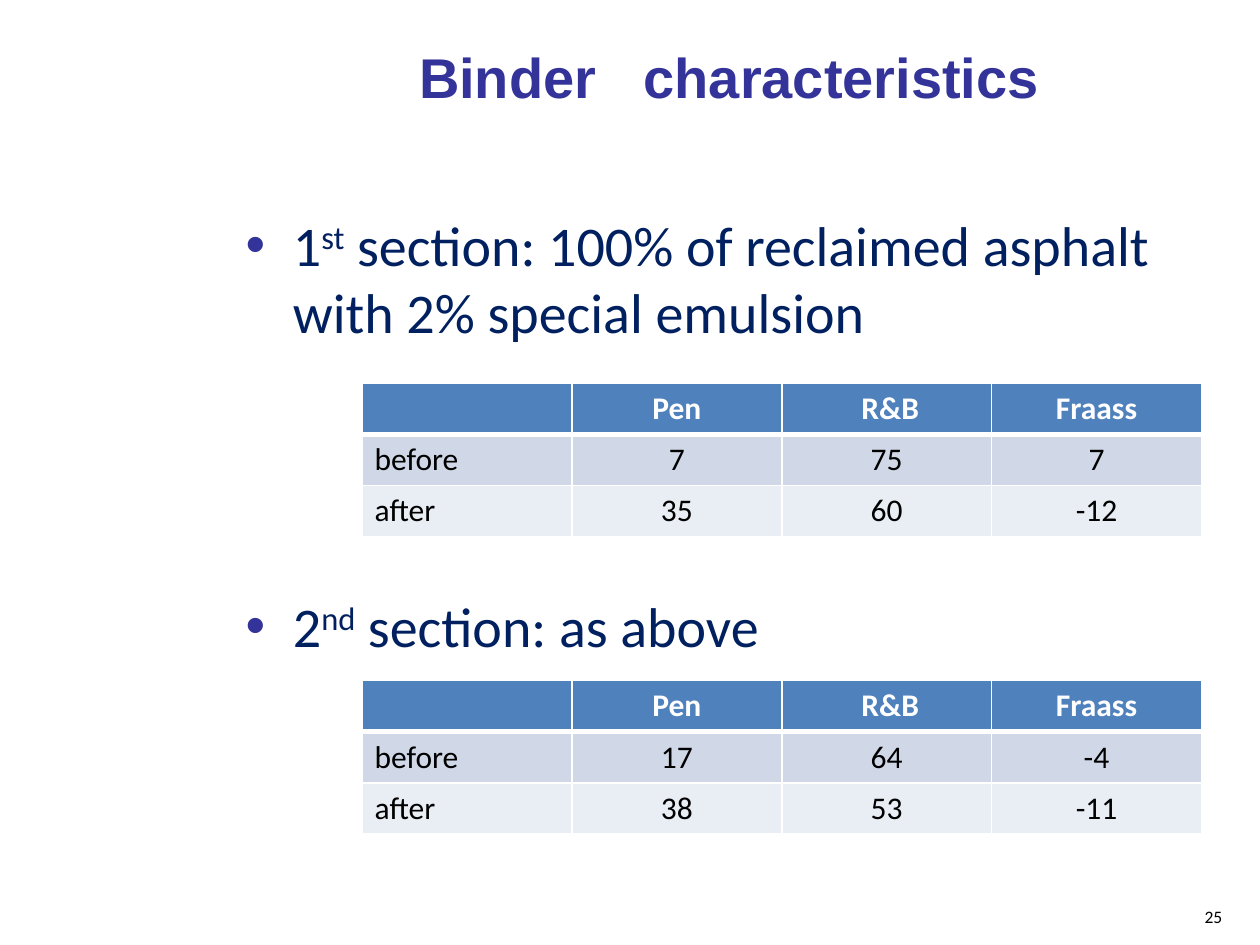
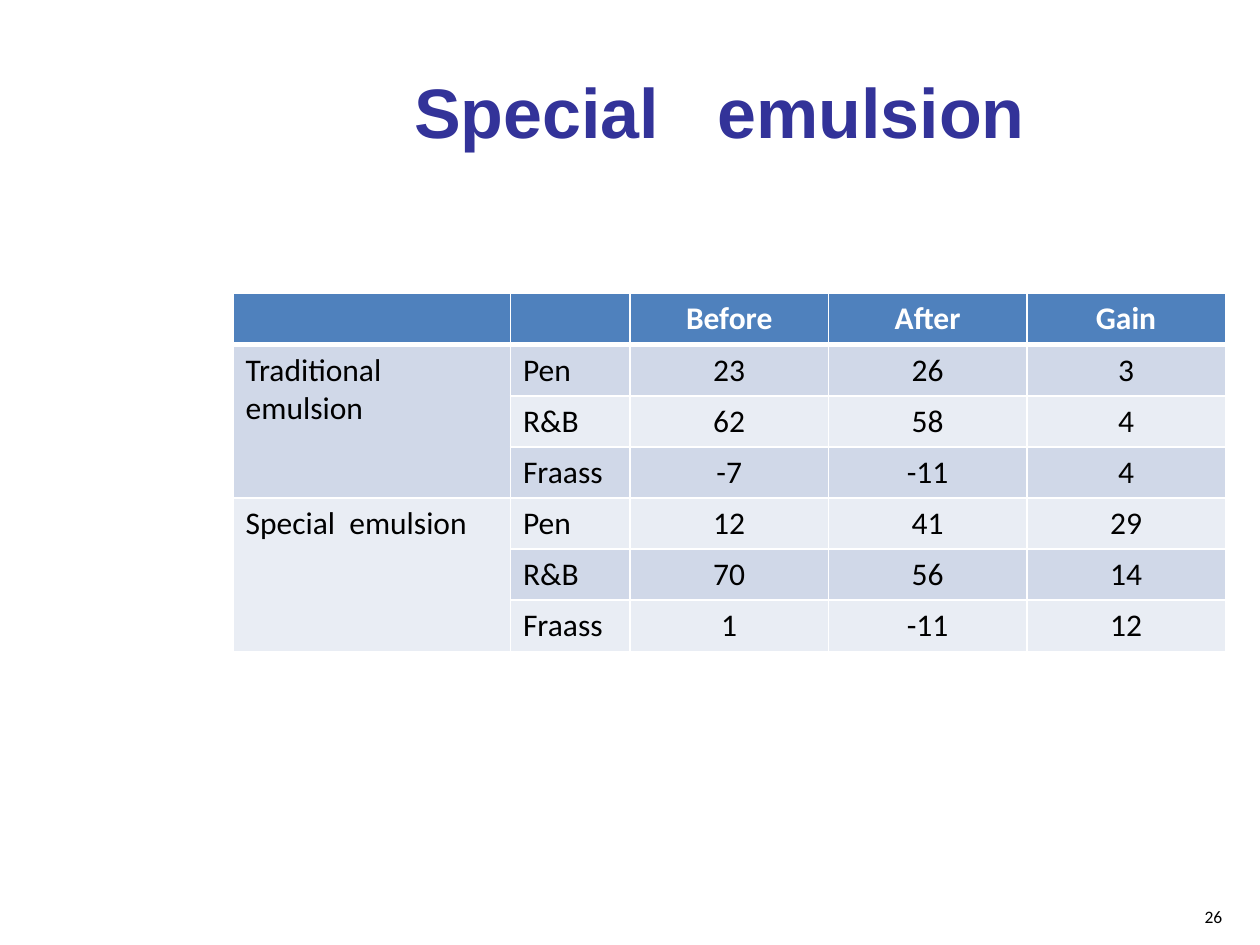
from pptx import Presentation
from pptx.dml.color import RGBColor
from pptx.enum.text import MSO_ANCHOR, MSO_AUTO_SIZE, PP_ALIGN
from pptx.oxml.ns import qn
from pptx.util import Cm, Pt
from lxml.etree import SubElement

COLORS = {
    "title": "333399",
    "body": "002060",
    "header": "4F81BD",
    "band_dark": "D0D8E8",
    "band_light": "E9EDF4",
    "white": "FFFFFF",
    "black": "000000",
}
CONTENT_LEFT, CONTENT_WIDTH = Cm(4.7), Cm(20)
ROW_HEIGHT = Cm(1.03)
TESTS = ["Pen", " R&B", "Fraass"]


# Text
def write_text(paragraph, text, size=18, color="black", font="Calibri",
               bold=False, raised=0, spacing=0):
    """Add a run; raised is a percentage, spacing is in points."""
    run = paragraph.add_run()
    run.text = text
    run.font.size = Pt(size)
    run.font.name = font
    run.font.bold = bold
    run.font.color.rgb = RGBColor.from_string(COLORS[color])
    properties = run.font._element
    if raised:
        properties.set("baseline", str(raised * 1000))
    if spacing:
        properties.set("spc", str(round(spacing * 100)))


def write_spaced(paragraph, words, gap, **style):
    """Write two words with a widened space between them."""
    first, second = words
    write_text(paragraph, first, **style)
    write_text(paragraph, " ", spacing=gap, **style)
    write_text(paragraph, second, **style)


def place(shape, left, top, width, height):
    shape.left, shape.top, shape.width, shape.height = left, top, width, height


# Shared slide parts
def add_title(slide, words, height, size):
    title = slide.shapes.title
    place(title, CONTENT_LEFT, Cm(0.53), CONTENT_WIDTH, height)
    frame = title.text_frame
    frame.auto_size = MSO_AUTO_SIZE.NONE
    frame.vertical_anchor = MSO_ANCHOR.MIDDLE
    heading = frame.paragraphs[0]
    heading.alignment = PP_ALIGN.CENTER
    write_spaced(heading, words, gap=0.56 * size, size=size, color="title",
                 font="Arial", bold=True)


def add_page_number(slide, number):
    box = slide.shapes.add_textbox(Cm(18.97), Cm(17.96), Cm(5.92), Cm(1.02))
    frame = box.text_frame
    frame.word_wrap = True
    frame.vertical_anchor = MSO_ANCHOR.MIDDLE
    frame.paragraphs[0].alignment = PP_ALIGN.RIGHT
    write_text(frame.paragraphs[0], str(number), size=10)


# Bulleted list
def add_bullet(paragraph):
    properties = paragraph._p.get_or_add_pPr()
    properties.set("marL", str(Cm(0.95)))
    properties.set("indent", str(-Cm(0.95)))
    bullet_color = SubElement(properties, qn("a:buClr"))
    SubElement(bullet_color, qn("a:srgbClr")).set("val", COLORS["title"])
    SubElement(properties, qn("a:buFont")).set("typeface", "Arial")
    SubElement(properties, qn("a:buChar")).set("char", "•")


def add_sections(slide, sections, gap):
    body = slide.placeholders[1]
    place(body, CONTENT_LEFT, Cm(4.11), CONTENT_WIDTH, Cm(13.59))
    frame = body.text_frame
    frame.auto_size = MSO_AUTO_SIZE.NONE
    for index, (number, ordinal, description) in enumerate(sections):
        section = frame.add_paragraph() if index else frame.paragraphs[0]
        add_bullet(section)
        section.space_before = Pt(gap if index else 0)
        write_text(section, number, size=32, color="body")
        write_text(section, ordinal, size=32, color="body", raised=30)
        write_text(section, description, size=32, color="body")


# Tables
def set_borders(cell, top, bottom):
    properties = cell._tc.get_or_add_tcPr()
    for side, width in (("L", 1), ("R", 1), ("T", top), ("B", bottom)):
        line = SubElement(properties, qn(f"a:ln{side}"), w=str(Pt(width)))
        fill = SubElement(line, qn("a:solidFill"))
        SubElement(fill, qn("a:srgbClr")).set("val", COLORS["white"])


def fill_cell(cell, content, row, is_label):
    is_header = row == 0
    set_borders(cell, top=3 if row == 1 else 1, bottom=3 if is_header else 1)
    band = "header" if is_header else ("band_light", "band_dark")[row % 2]
    cell.fill.solid()
    cell.fill.fore_color.rgb = RGBColor.from_string(COLORS[band])
    if not content:
        return
    entry = cell.text_frame.paragraphs[0]
    if is_header or not is_label:
        entry.alignment = PP_ALIGN.CENTER
    if isinstance(content, tuple):
        write_spaced(entry, content, gap=4)
    else:
        write_text(entry, str(content), bold=is_header,
                   color="white" if is_header else "black")


def add_data_table(slide, rows, left, top, widths, label_columns=1):
    frame = slide.shapes.add_table(len(rows), len(widths), left, top,
                                   sum(widths), ROW_HEIGHT * len(rows))
    table = frame.table
    for column, width in zip(table.columns, widths):
        column.width = width
    for row, contents in enumerate(rows):
        table.rows[row].height = ROW_HEIGHT
        for column, content in enumerate(contents):
            fill_cell(table.cell(row, column), content, row,
                      column < label_columns)
    return table


# Slides
def build_binder_slide(deck):
    slide = deck.slides.add_slide(deck.slide_layouts[1])
    add_title(slide, ("Binder", "characteristics"), Cm(2), 32)
    add_sections(slide, [
        ("1", "st",
         " section: 100% of reclaimed asphalt with 2% special emulsion"),
        ("2", "nd", " section: as above"),
    ], gap=141)
    add_page_number(slide, 25)
    measurements = [
        (Cm(7.73), [7, 75, 7], [35, 60, -12]),
        (Cm(13.72), [17, 64, -4], [38, 53, -11]),
    ]
    for top, before, after in measurements:
        rows = [["", *TESTS], ["before", *before], ["after", *after]]
        add_data_table(slide, rows, Cm(7.3), top, [Cm(4.23)] * 4)


def build_emulsion_slide(deck):
    slide = deck.slides.add_slide(deck.slide_layouts[5])
    results = {
        "Traditional emulsion": [(23, 26, 3), (62, 58, 4), (-7, -11, 4)],
        ("Special", "emulsion"): [(12, 41, 29), (70, 56, 14), (1, -11, 12)],
    }
    rows = [["", "", "Before", "After", "Gain"]]
    for emulsion, values in results.items():
        for index, (test, figures) in enumerate(zip(TESTS, values)):
            rows.append(["" if index else emulsion, test.strip(), *figures])
    table = add_data_table(slide, rows, CONTENT_LEFT, Cm(5.92),
                           [Cm(5.59), Cm(2.41)] + [Cm(4)] * 3, label_columns=2)
    for first in range(1, len(rows), len(TESTS)):
        table.cell(first, 0).merge(table.cell(first + len(TESTS) - 1, 0))
    add_page_number(slide, 26)
    add_title(slide, ("Special", "emulsion "), Cm(3.4), 40)


def main():
    deck = Presentation()
    deck.slide_width, deck.slide_height = Cm(25.4), Cm(19.05)
    build_binder_slide(deck)
    build_emulsion_slide(deck)
    deck.save("out.pptx")


if __name__ == "__main__":
    main()
